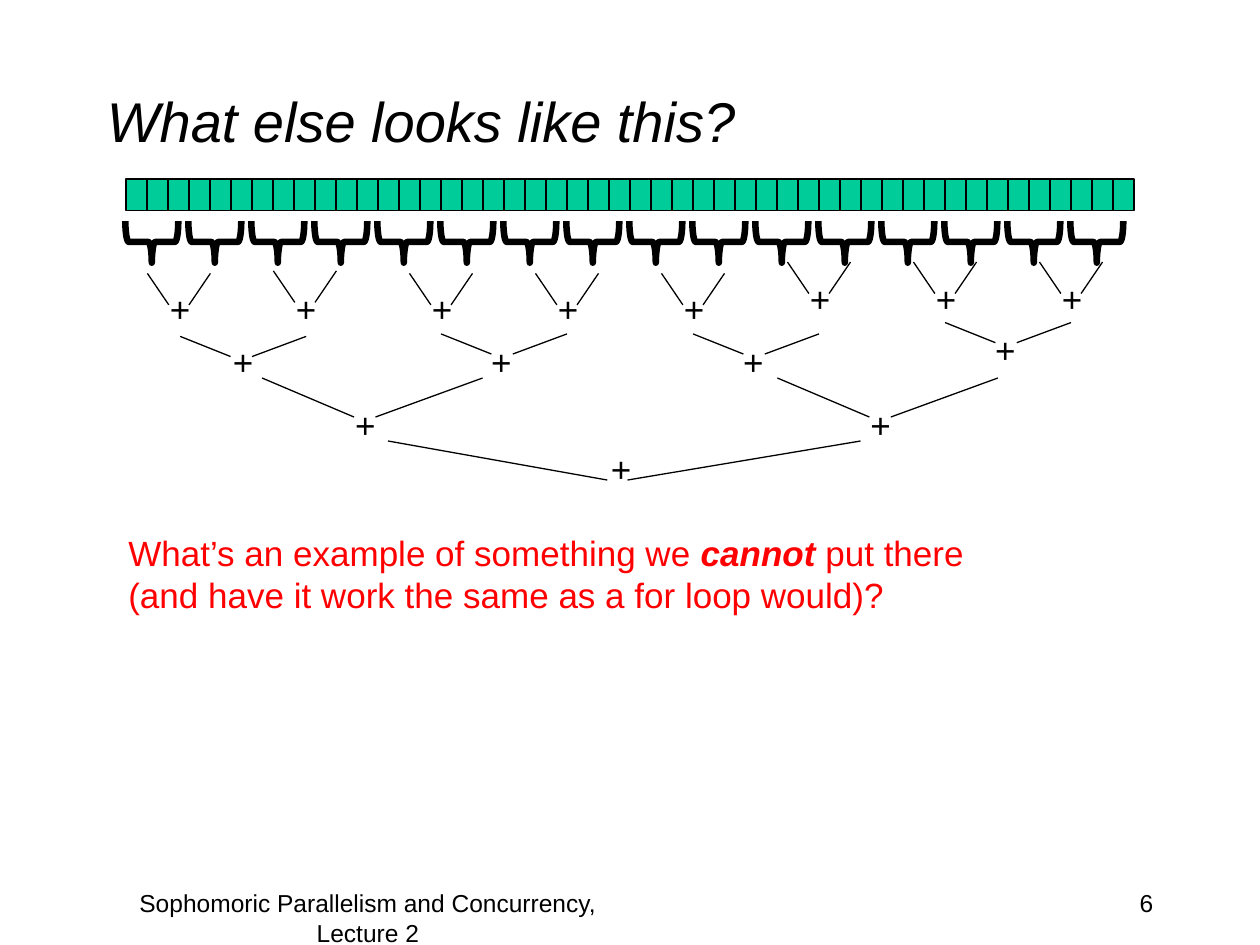
import pptx
import pptx.util
import pptx.dml.color
import pptx.enum.shapes
import pptx.enum.text
from dataclasses import dataclass

Inches = pptx.util.Inches
Pt = pptx.util.Pt
Shape = pptx.enum.shapes.MSO_SHAPE
Align = pptx.enum.text.PP_ALIGN
Anchor = pptx.enum.text.MSO_ANCHOR


@dataclass(frozen=True)
class Theme:
    font: str = "Arial"
    ink: str = "000000"
    cell: str = "00CC99"
    alert: str = "FF0000"
    title: int = 32
    body: int = 20
    foot: int = 14
    thin: float = 0.75
    thick: float = 3.75


THEME = Theme()


def color(code):
    return pptx.dml.color.RGBColor.from_string(code)


def write(slide, text, box, size=THEME.body, ink=THEME.ink, slant=False,
          align=Align.LEFT, anchor=Anchor.TOP, wrap=True, before=0, strong=""):
    """Add a text box; the word given as strong is set bold italic."""
    frame = slide.shapes.add_textbox(*map(Inches, box)).text_frame
    frame.word_wrap = wrap
    frame.vertical_anchor = anchor
    para = frame.paragraphs[0]
    para.alignment = align
    para.space_before = Pt(before)
    for row, line in enumerate(text.split("\n")):
        if row:
            para.add_line_break()
        parts = line.partition(strong) if strong else (line,)
        for part in filter(None, parts):
            run = para.add_run()
            run.text = part
            font = run.font
            font.name, font.size = THEME.font, Pt(size)
            font.color.rgb = color(ink)
            font.bold = part == strong
            font.italic = slant or part == strong


def draw(slide, kind, box, width, fill=None, turn=0):
    shape = slide.shapes.add_shape(kind, *map(Inches, box))
    shape.shadow.inherit = False
    shape.rotation = turn
    shape.line.color.rgb = color(THEME.ink)
    shape.line.width = Pt(width)
    if fill:
        shape.fill.solid()
        shape.fill.fore_color.rgb = color(fill)
    else:
        shape.fill.background()


def link(slide, start, end):
    line = slide.shapes.add_connector(
        pptx.enum.shapes.MSO_CONNECTOR.STRAIGHT, *map(Inches, start + end))
    line.line.color.rgb = color(THEME.ink)
    line.line.width = Pt(THEME.thin)
    props = line._element.spPr
    props.append(props.makeelement(pptx.oxml.ns.qn("a:effectLst"), {}))


def join(slide, left, top, span, inner, drop, plus):
    """Two lines that slope down to a plus sign."""
    for outer, near in zip((0, span), inner):
        link(slide, (left + outer, top), (left + near, top + drop))
    write(slide, "+", (*plus, 0.36, 0.44), wrap=False)


def tree(slide):
    # First level: pairs of braces
    for left, top, mark in (
            (1.17, 2.17, 2.23), (2.17, 2.15, 2.23), (3.25, 2.17, 2.23),
            (4.25, 2.17, 2.23), (5.25, 2.17, 2.23), (6.25, 2.08, 2.15),
            (7.25, 2.08, 2.15), (8.25, 2.08, 2.15)):
        join(slide, left, top, 0.5, (0.17, 0.33), 0.25, (left + 0.08, mark))
    # Second level
    for left, top, mark in ((1.43, 2.67, (1.75, 2.65)), (3.5, 2.65, (3.8, 2.65)),
                            (5.5, 2.65, (5.8, 2.65)), (7.5, 2.56, (7.8, 2.56))):
        join(slide, left, top, 1, (0.4, 0.57), 0.16, mark)
    # Third level and root
    for left in (2.08, 6.17):
        join(slide, left, 3, 1.75, (0.73, 0.9), 0.31, (left + 0.64, 3.15))
    join(slide, 3.08, 3.5, 3.75, (1.74, 1.9), 0.31, (4.75, 3.5))


def main():
    deck = pptx.Presentation()
    deck.slide_width, deck.slide_height = Inches(10), Inches(7.5)
    slide = deck.slides.add_slide(deck.slide_layouts[6])

    # Title and footer
    write(slide, "What else looks like this?", (0.75, 0.33, 8.5, 1.25),
          size=THEME.title, slant=True, anchor=Anchor.MIDDLE)
    write(slide, "6", (7.17, 7, 2.08, 0.5), size=THEME.foot, align=Align.RIGHT)
    write(slide, "Sophomoric Parallelism and Concurrency, Lecture 2",
          (0.67, 7, 4.5, 0.5), size=THEME.foot, align=Align.CENTER)

    # Array cells, six to the inch
    for i in range(48):
        draw(slide, Shape.RECTANGLE, (1 + i / 6, 1.42, 1 / 6, 0.25),
             THEME.thin, fill=THEME.cell)

    # Braces under the cells, two to the inch
    for i in range(16):
        draw(slide, Shape.LEFT_BRACE, (1.04 + i / 2, 1.71, 0.33, 0.42),
             THEME.thick, turn=270)

    tree(slide)

    # Question
    write(slide, "What’s an example of something we cannot put there \n"
          "(and have it work the same as a for loop would)?",
          (0.92, 4.17, 8.5, 0.83), ink=THEME.alert, before=4, strong="cannot")

    deck.save("out.pptx")


if __name__ == "__main__":
    main()
